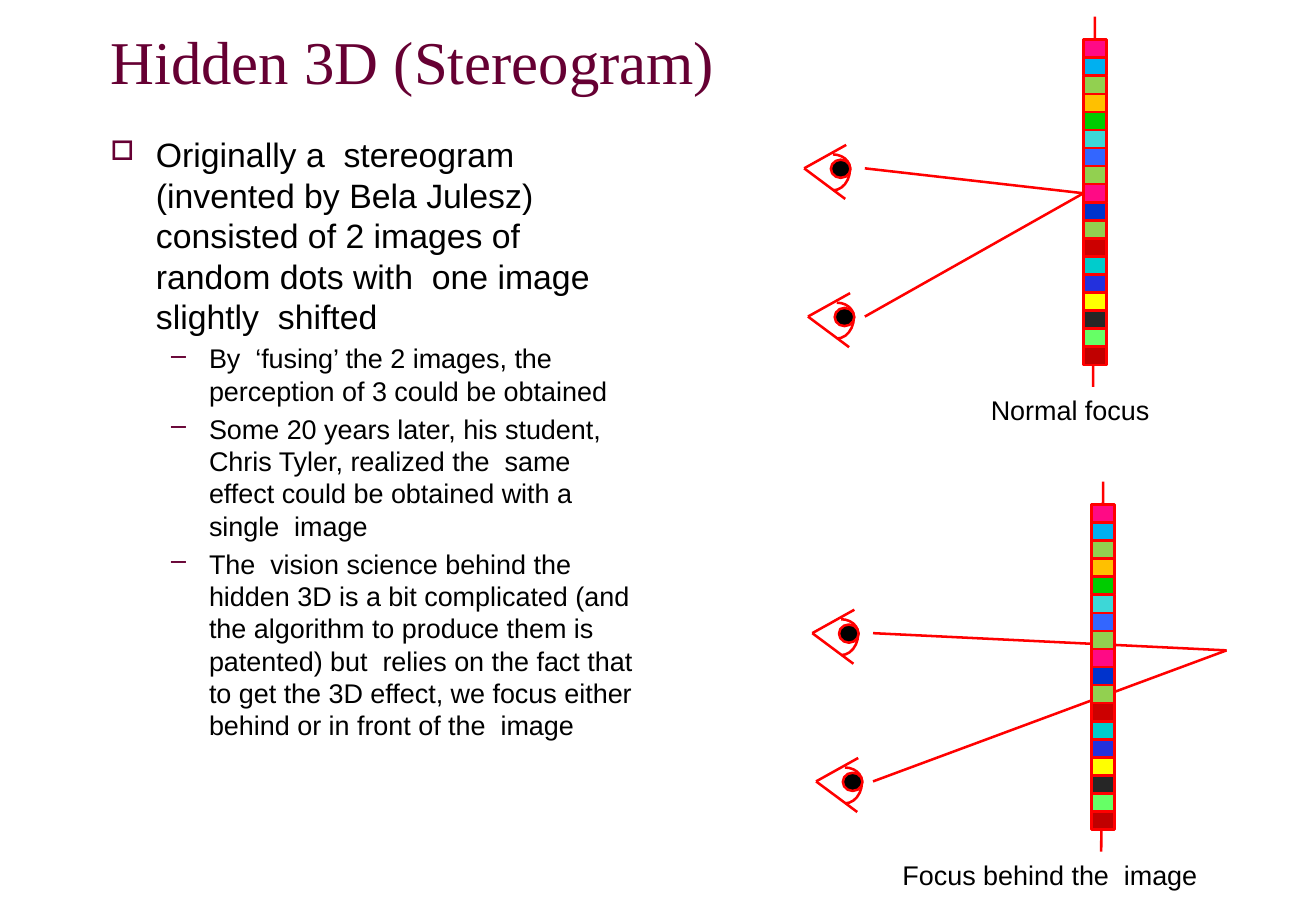
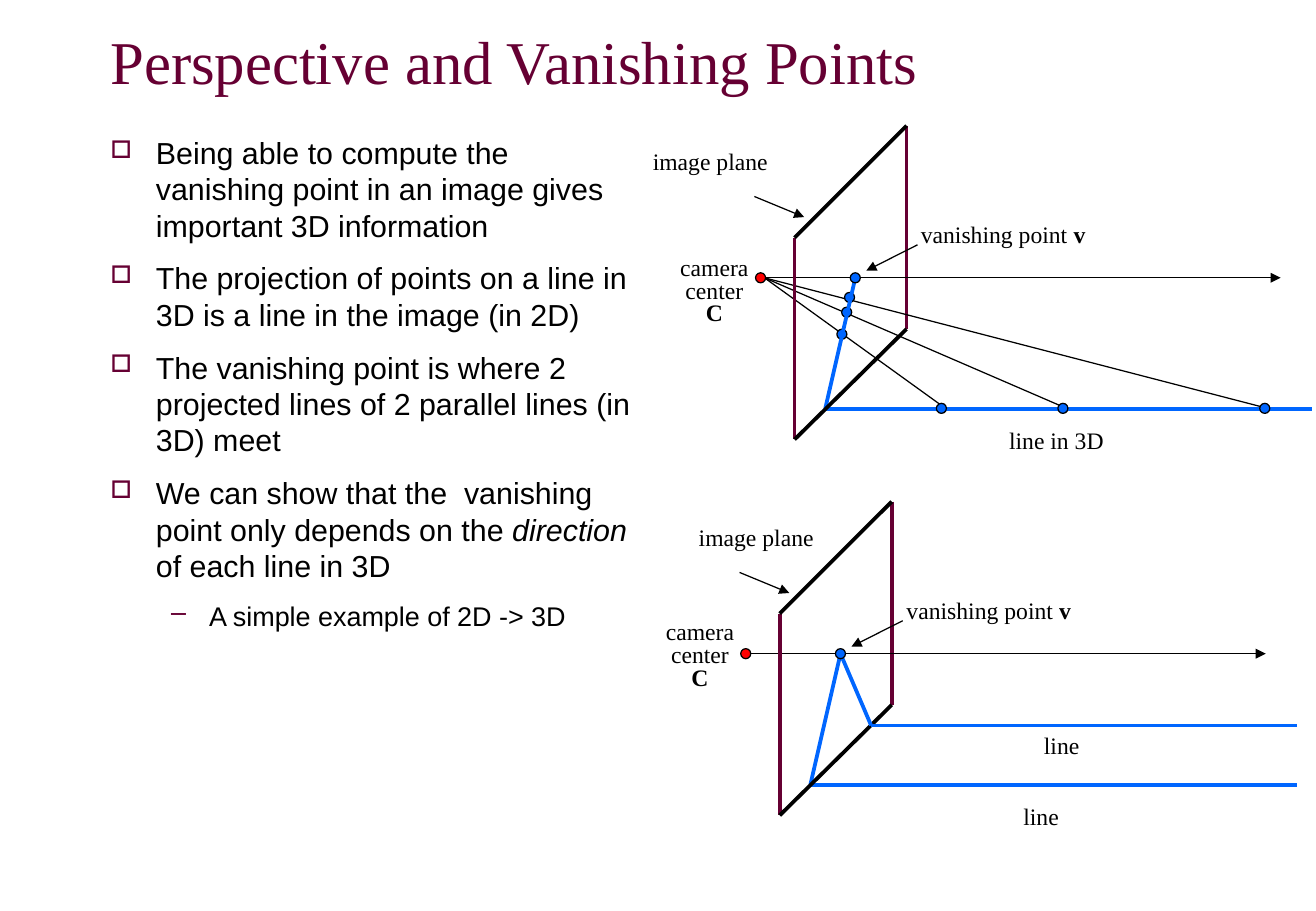
from dataclasses import dataclass
from typing import NamedTuple

from pptx import Presentation
from pptx.dml.color import RGBColor
from pptx.enum.shapes import MSO_CONNECTOR, MSO_SHAPE
from pptx.enum.text import MSO_ANCHOR, PP_ALIGN
from pptx.oxml.xmlchemy import OxmlElement
from pptx.util import Cm, Pt

STRAIGHT = MSO_CONNECTOR.STRAIGHT
ARC, OVAL, RECTANGLE = MSO_SHAPE.ARC, MSO_SHAPE.OVAL, MSO_SHAPE.RECTANGLE
MIDDLE, TOP = MSO_ANCHOR.MIDDLE, MSO_ANCHOR.TOP
LEFT, CENTER = PP_ALIGN.LEFT, PP_ALIGN.CENTER

MAROON = RGBColor(0x66, 0x00, 0x33)
BLACK = RGBColor(0x00, 0x00, 0x00)
RED = RGBColor(0xFF, 0x00, 0x00)
BLUE = RGBColor(0x00, 0x66, 0xFF)
DOT_COLOURS = [RGBColor.from_string(code) for code in (
    "FF0A85", "00B0F0", "92D050", "FFC000", "00CC00", "3DD7D7",
    "3366FF", "92D050", "FF0A85", "0033CC", "92D050", "CC0000",
    "00CCCC", "2330DD", "FFFF00", "262626", "66FF66", "C00000")]

SANS, SERIF = "Arial", "Times New Roman"
THIN, MEDIUM, THICK = 0.75, 1.5, 2.25
LEFT_SIDE = 1

STRIP_WIDTH, STRIP_HEIGHT = 0.48, 6.8
FOCUS_CELL = 8
DOT_SIZE = 0.21


class Point(NamedTuple):
    x: float
    y: float

    def shift(self, x: float, y: float) -> "Point":
        return Point(self.x + x, self.y + y)


class Area(NamedTuple):
    left: float
    top: float
    width: float
    height: float


class Span(NamedTuple):
    text: str
    bold: bool = False
    italic: bool = False


class Bullet(NamedTuple):
    mark: str
    margin: float
    hanging: float
    percent: int


@dataclass(frozen=True)
class Para:
    spans: list[Span]
    size: float
    font: str = SANS
    colour: RGBColor = BLACK
    align: PP_ALIGN = LEFT
    level: int = 0
    bullet: Bullet | None = None
    before: float = 0
    after: float = 0
    line_spacing: float | None = None


@dataclass(frozen=True)
class Label:
    area: Area
    lines: list[list[Span]]


@dataclass(frozen=True)
class Stereogram:
    strip: Point
    focus: Point
    on_strip: bool
    caption: str
    caption_area: Area


@dataclass(frozen=True)
class Perspective:
    camera: Point
    ray_ends: list[float]
    image_dots: list[Point]
    second_line: bool
    labels: list[Label]


BULLETS = [Bullet("□", 0.95, 0.95, 80), Bullet("–", 2.06, 0.79, 100)]
TITLE_AREA = Area(2.06, 0, 23.39, 2.54)
BODY_AREA = Area(2.06, 2.68, 11.61, 14.26)

STEREOGRAMS = [
    Stereogram(Point(22.65, 0.83), Point(0, 3.21), True,
               "Normal focus", Area(20.02, 8.1, 4.7, 0.94)),
    Stereogram(Point(22.82, 10.55), Point(2.82, 3.05), False,
               "Focus behind the  image", Area(18.24, 17.83, 7.42, 0.94)),
]
IMAGE_PLANE = [[Span("image plane")]]
CAMERA = [[Span("camera")], [Span("center")], [Span("C", bold=True)]]
VANISHING = [[Span("vanishing point "), Span("v", bold=True)]]
LINE = [[Span("line")]]
PERSPECTIVES = [
    Perspective(
        Point(15.9, 5.81), [3.78, 6.32, 10.54],
        [Point(1.7, 1.18), Point(1.8, 0.72), Point(1.86, 0.41)], False,
        [Label(Area(13.39, 2.95, 2.92, 0.85), IMAGE_PLANE),
         Label(Area(13.97, 5.16, 1.93, 1.78), CAMERA),
         Label(Area(18.97, 4.47, 4, 0.85), VANISHING),
         Label(Area(20.83, 8.79, 2.51, 0.85), [[Span("line in 3D")]])]),
    Perspective(
        Point(15.59, 13.67), [], [], True,
        [Label(Area(14.35, 10.82, 2.92, 0.85), IMAGE_PLANE),
         Label(Area(13.67, 12.78, 1.93, 1.78), CAMERA),
         Label(Area(18.64, 12.34, 4.06, 0.85), VANISHING),
         Label(Area(21.13, 16.64, 1.27, 0.85), LINE),
         Label(Area(21.56, 15.16, 1.27, 0.85), LINE)]),
]


def add_bullet(para, bullet: Bullet) -> None:
    properties = para._p.get_or_add_pPr()
    properties.set("marL", str(Cm(bullet.margin)))
    properties.set("indent", str(-Cm(bullet.hanging)))
    colour = OxmlElement("a:buClr")
    value = OxmlElement("a:srgbClr")
    value.set("val", str(MAROON))
    colour.append(value)
    size = OxmlElement("a:buSzPct")
    size.set("val", str(bullet.percent * 1000))
    mark = OxmlElement("a:buChar")
    mark.set("char", bullet.mark)
    properties.extend([colour, size, mark])


def add_text(slide, area: Area, paras: list[Para],
             anchor: MSO_ANCHOR = TOP, wrap: bool = True) -> None:
    box = slide.shapes.add_textbox(*map(Cm, area))
    frame = box.text_frame
    frame.word_wrap = wrap
    frame.vertical_anchor = anchor
    for index, content in enumerate(paras):
        para = frame.add_paragraph() if index else frame.paragraphs[0]
        if content.bullet:
            add_bullet(para, content.bullet)
        layout = {
            "level": content.level,
            "alignment": content.align,
            "space_before": Pt(content.before if index else 0),
            "space_after": Pt(content.after),
            "line_spacing": content.line_spacing,
        }
        for name, value in layout.items():
            setattr(para, name, value)
        for span in content.spans:
            run = para.add_run()
            run.text = span.text
            style = {"name": content.font, "size": Pt(content.size),
                     "bold": span.bold, "italic": span.italic}
            for name, value in style.items():
                setattr(run.font, name, value)
            run.font.color.rgb = content.colour


def add_line(slide, start: Point, end: Point, colour: RGBColor,
             width: float, arrow: bool = False):
    line = slide.shapes.add_connector(STRAIGHT, *map(Cm, (*start, *end)))
    line.line.color.rgb = colour
    line.line.width = Pt(width)
    if arrow:
        head = OxmlElement("a:tailEnd")
        head.set("type", "triangle")
        line.line._get_or_add_ln().append(head)
    line._element.spPr.append(OxmlElement("a:effectLst"))
    return line


def add_shape(slide, kind: MSO_SHAPE, area: Area, fill: RGBColor | None,
              colour: RGBColor, width: float):
    shape = slide.shapes.add_shape(kind, *map(Cm, area))
    shape.shadow.inherit = False
    if fill is None:
        shape.fill.background()
    else:
        shape.fill.solid()
        shape.fill.fore_color.rgb = fill
    shape.line.color.rgb = colour
    shape.line.width = Pt(width)
    return shape


def add_dot(slide, centre: Point, fill: RGBColor) -> None:
    corner = centre.shift(-DOT_SIZE / 2, -DOT_SIZE / 2)
    add_shape(slide, OVAL, Area(*corner, DOT_SIZE, DOT_SIZE), fill, BLACK, THIN)


def add_eye(slide, tip: Point) -> None:
    for lid in (tip.shift(0.88, -0.49), tip.shift(0.86, 0.64)):
        add_line(slide, tip, lid, RED, MEDIUM)
    add_shape(slide, ARC, Area(*tip.shift(0.25, -0.29), 0.71, 0.58), None, RED, MEDIUM)
    lower = add_shape(slide, ARC, Area(*tip.shift(0.25, -0.43), 0.71, 0.89), None, RED, MEDIUM)
    # Quarter turn from 0 to 90 degrees, in units of 100000/60000 degree
    lower.adjustments[0], lower.adjustments[1] = 0, 54
    add_shape(slide, OVAL, Area(*tip.shift(0.56, -0.18), 0.41, 0.38), BLACK, RED, MEDIUM)


def draw_stereogram(slide, diagram: Stereogram) -> None:
    strip = diagram.strip
    add_line(slide, strip.shift(0.24, -0.48), strip.shift(0.2, 7.26), RED, MEDIUM)
    rays = []
    for eye in (Point(-5.84, 2.69), Point(-5.76, 5.79)):
        add_eye(slide, strip.shift(*eye))
        rays.append(add_line(slide, strip.shift(-4.57, eye.y),
                             strip.shift(*diagram.focus), RED, MEDIUM))
    pitch = STRIP_HEIGHT / len(DOT_COLOURS)
    cells = [
        add_shape(slide, RECTANGLE,
                  Area(*strip.shift(0, row * pitch), STRIP_WIDTH, pitch),
                  colour, RED, MEDIUM)
        for row, colour in enumerate(DOT_COLOURS)]
    if diagram.on_strip:
        for ray in rays:
            ray.end_connect(cells[FOCUS_CELL], LEFT_SIDE)
    add_text(slide, diagram.caption_area,
             [Para([Span(diagram.caption)], 16, align=CENTER)])


def draw_perspective(slide, diagram: Perspective) -> None:
    at = diagram.camera.shift
    near_top, near_bottom = at(0.71, -0.84), at(0.71, 3.38)
    far_top, far_bottom = at(3.05, -3.18), at(3.05, 1.07)
    vanishing, ground = at(1.98, 0), at(1.35, 2.74)
    line_end = 11.53

    add_line(slide, far_top, far_bottom, MAROON, THICK)
    add_line(slide, ground, at(line_end, 2.74), BLUE, THICK)
    for x, image_dot in zip(diagram.ray_ends, diagram.image_dots):
        add_line(slide, at(0.08, 0), at(x + 0.1, 2.74), BLACK, THIN)
        add_dot(slide, at(x, 2.73), BLUE)
        add_dot(slide, at(*image_dot), BLUE)
    add_line(slide, ground, vanishing, BLUE, THICK)
    add_line(slide, at(0.08, 0), at(10.87, 0), BLACK, THIN, arrow=True)
    add_line(slide, at(-0.13, -1.7), at(0.91, -1.27), BLACK, THIN, arrow=True)
    add_line(slide, at(3.28, -0.69), at(2.21, -0.15), BLACK, THIN, arrow=True)
    add_line(slide, near_top, near_bottom, MAROON, THICK)
    add_line(slide, near_bottom, far_bottom, BLACK, THICK)
    add_line(slide, near_top, far_top, BLACK, THICK)
    if diagram.second_line:
        corner = at(2.62, 1.5)
        for end in (vanishing, at(line_end, 1.5)):
            add_line(slide, corner, end, BLUE, THICK)
    add_dot(slide, vanishing, BLUE)
    add_dot(slide, diagram.camera, RED)
    for label in diagram.labels:
        paras = [Para(spans, 14, SERIF, align=CENTER,
                      line_spacing=0.8 if index else None)
                 for index, spans in enumerate(label.lines)]
        add_text(slide, label.area, paras, wrap=False)


def item(*spans: Span, size: float, level: int = 0, after: float = 0) -> Para:
    """Bulleted paragraph with a fifth of its text size as space before."""
    return Para(list(spans), size, level=level, bullet=BULLETS[level],
                before=size * 0.2, after=after)


def add_slide(deck, title: str, body: list[Para]):
    slide = deck.slides.add_slide(deck.slide_layouts[6])
    add_text(slide, TITLE_AREA, [Para([Span(title)], 36, SERIF, MAROON)], MIDDLE)
    add_text(slide, BODY_AREA, body)
    return slide


def main() -> None:
    deck = Presentation()
    deck.slide_width, deck.slide_height = Cm(27.51), Cm(19.05)

    details = [
        "By  ‘fusing’ the 2 images, the perception of 3 could be obtained",
        "Some 20 years later, his student, Chris Tyler, realized the  same effect "
        "could be obtained with a single  image",
        "The  vision science behind the hidden 3D is a bit complicated (and the "
        "algorithm to produce them is patented) but  relies on the fact that to get "
        "the 3D effect, we focus either behind or in front of the  image"]
    slide = add_slide(deck, "Hidden 3D (Stereogram)", [
        item(Span("Originally a  stereogram (invented by Bela Julesz) consisted of 2 "
                  "images of random dots with  one image slightly  shifted"), size=20),
        *(item(Span(text), size=16, level=1) for text in details)])
    for stereogram in STEREOGRAMS:
        draw_stereogram(slide, stereogram)

    points = [
        [Span("Being able to compute the vanishing point in an image gives "
              "important 3D information")],
        [Span("The projection of points on a line in 3D is a line in the image (in 2D)")],
        [Span("The vanishing point is where 2 projected lines of 2 parallel lines "
              "(in 3D) meet")],
        [Span("We can show that the  vanishing point only depends on the "),
         Span("direction ", italic=True), Span("of each line in 3D")]]
    slide = add_slide(deck, "Perspective and Vanishing Points", [
        *(item(*spans, size=18, after=6) for spans in points),
        item(Span("A simple example of 2D -> 3D"), size=16, level=1, after=6)])
    for perspective in PERSPECTIVES:
        draw_perspective(slide, perspective)

    deck.save("out.pptx")


if __name__ == "__main__":
    main()
